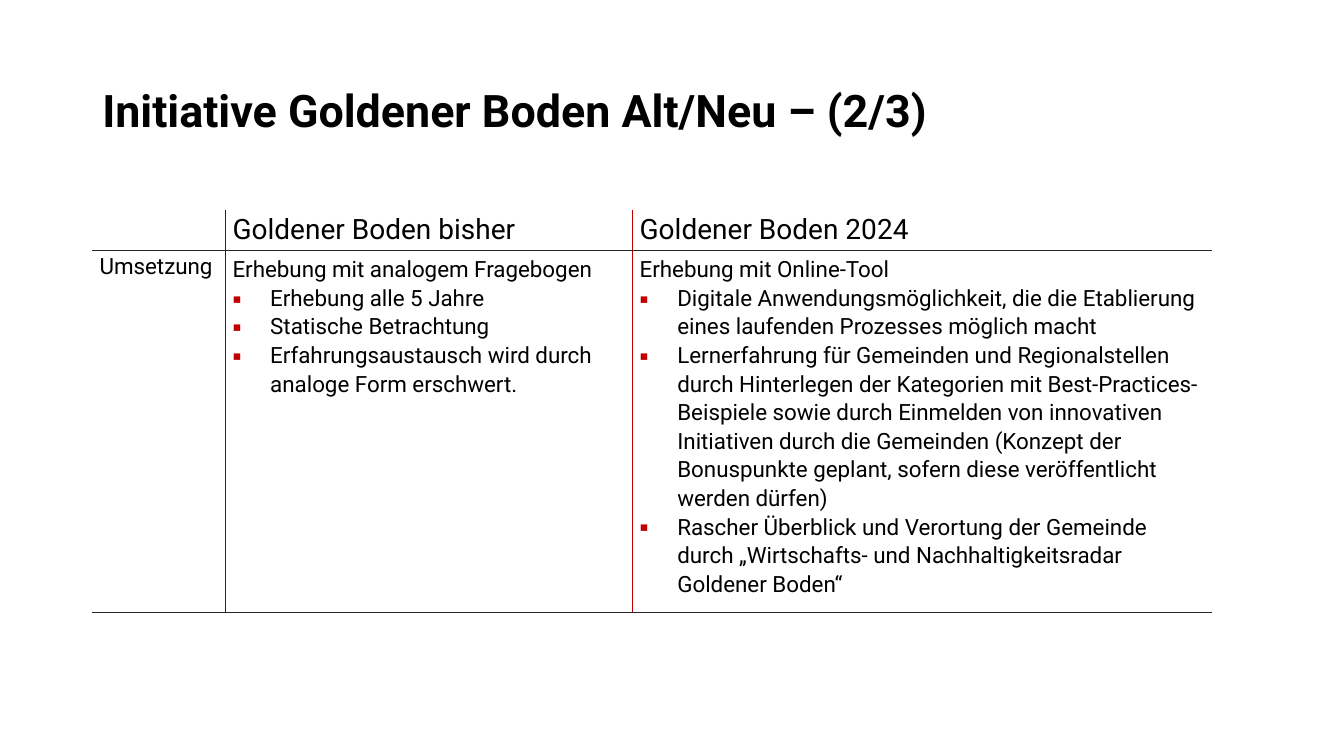
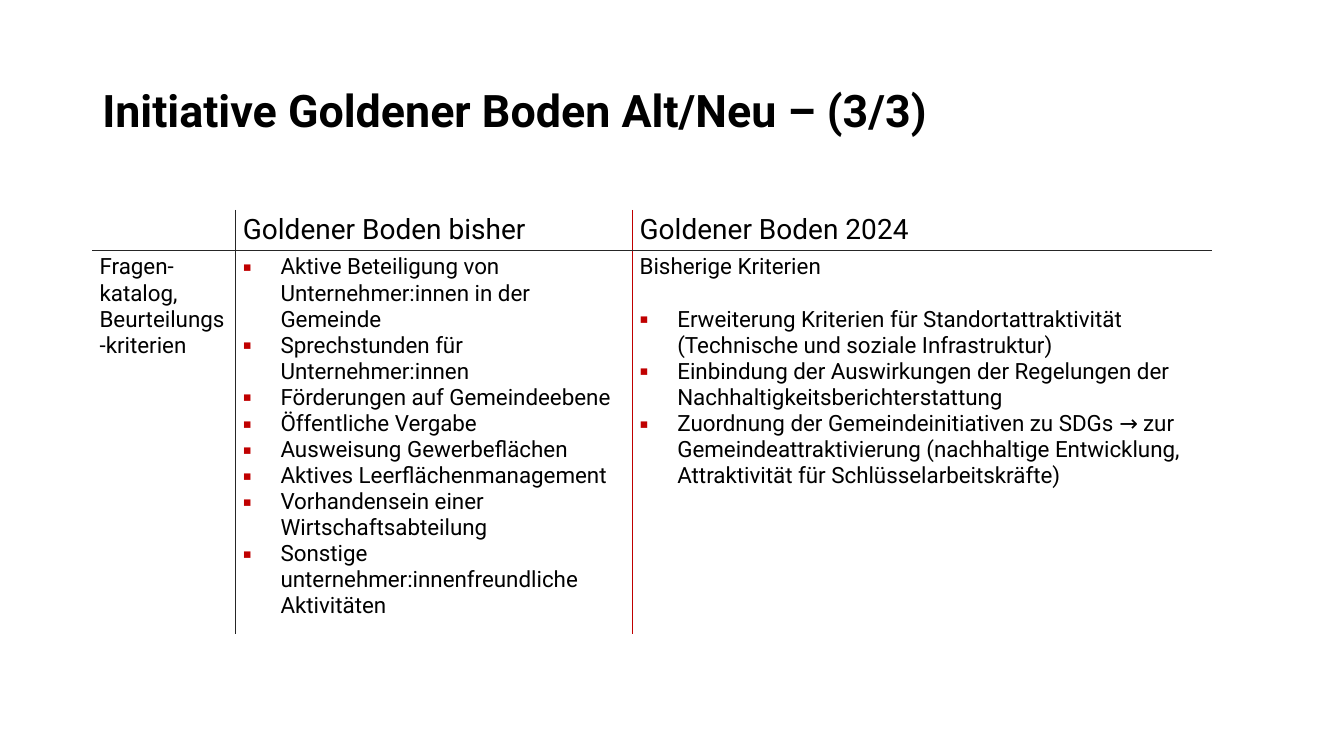
"""Build two slides comparing the old and the new Goldener Boden initiative."""
import pptx
import pptx.dml.color
import pptx.enum.text
import pptx.oxml
import pptx.oxml.ns
import pptx.util
from lxml import etree

Cm = pptx.util.Cm
Pt = pptx.util.Pt
qn = pptx.oxml.ns.qn

FONT = "Roboto"
COLORS = {"text": "000000", "line": "262626", "accent": "C00000"}
HEADINGS = ["", "Goldener Boden bisher", "Goldener Boden 2024"]
COLUMN_EDGES = [None, "line", "accent", None]
HEADER_HEIGHT = 1

SLIDES = [
    {
        "title": "Initiative Goldener Boden Alt/Neu – (2/3)",
        "widths": [3.35, 10.26, 14.6],
        "body_height": 8.82,
        "bottom": "line",
        "spacing": 1.1,
        "intro_gap": 0,
        "topic": ["Umsetzung"],
        "columns": [
            ("Erhebung mit analogem Fragebogen", [
                "Erhebung alle 5 Jahre",
                "Statische Betrachtung",
                "Erfahrungsaustausch wird durch analoge Form erschwert.",
            ]),
            ("Erhebung mit Online-Tool", [
                "Digitale Anwendungsmöglichkeit, die die Etablierung eines "
                "laufenden Prozesses möglich macht",
                "Lernerfahrung für Gemeinden und Regionalstellen durch "
                "Hinterlegen der Kategorien mit Best-Practices-Beispiele sowie "
                "durch Einmelden von innovativen Initiativen durch die "
                "Gemeinden (Konzept der Bonuspunkte geplant, sofern diese "
                "veröffentlicht werden dürfen)",
                "Rascher Überblick und Verortung der Gemeinde durch "
                "„Wirtschafts- und Nachhaltigkeitsradar Goldener Boden“",
            ]),
        ],
    },
    {
        "title": "Initiative Goldener Boden Alt/Neu – (3/3)",
        "widths": [3.61, 10, 14.6],
        "body_height": 9.35,
        "bottom": None,
        "spacing": 1.0,
        "intro_gap": 18.6,
        "topic": ["Fragen-katalog,", "Beurteilungs-kriterien"],
        "columns": [
            (None, [
                "Aktive Beteiligung von Unternehmer:innen in der Gemeinde",
                "Sprechstunden für Unternehmer:innen",
                "Förderungen auf Gemeindeebene",
                "Öffentliche Vergabe",
                "Ausweisung Gewerbeflächen",
                "Aktives Leerflächenmanagement",
                "Vorhandensein einer Wirtschaftsabteilung",
                "Sonstige unternehmer:innenfreundliche Aktivitäten",
            ]),
            ("Bisherige Kriterien", [
                "Erweiterung Kriterien für Standortattraktivität (Technische "
                "und soziale Infrastruktur)",
                "Einbindung der Auswirkungen der Regelungen der "
                "Nachhaltigkeitsberichterstattung",
                "Zuordnung der Gemeindeinitiativen zu SDGs → zur "
                "Gemeindeattraktivierung (nachhaltige Entwicklung, "
                "Attraktivität für Schlüsselarbeitskräfte)",
            ]),
        ],
    },
]


def add_run(p, text, size, bold=False):
    r = p.add_run()
    r.text = text
    r.font.name = FONT
    r.font.size = Pt(size)
    r.font.bold = bold
    r.font.color.rgb = pptx.dml.color.RGBColor.from_string(COLORS["text"])


def next_paragraph(tf):
    p = tf.paragraphs[0]
    return tf.add_paragraph() if p.runs else p


def set_bullet(p):
    pPr = p._p.get_or_add_pPr()
    pPr.set("marL", str(Cm(0.95)))
    pPr.set("indent", str(-Cm(0.95)))
    color = etree.SubElement(pPr, qn("a:buClr"))
    etree.SubElement(color, qn("a:srgbClr"), val=COLORS["accent"])
    etree.SubElement(pPr, qn("a:buFont"), typeface=FONT)
    etree.SubElement(pPr, qn("a:buChar"), char="▪")


def add_title(slide, text):
    sp = slide.shapes.add_textbox(Cm(2.33), Cm(1.01), Cm(27), Cm(3.68))
    tf = sp.text_frame
    tf.word_wrap = True
    tf.vertical_anchor = pptx.enum.text.MSO_ANCHOR.MIDDLE
    p = tf.paragraphs[0]
    p.line_spacing = 0.9
    add_run(p, text, 32, bold=True)


def set_borders(cell, edges):
    tcPr = cell._tc.get_or_add_tcPr()
    for i, (side, color) in enumerate(zip("LRTB", edges)):
        ln = etree.Element(qn(f"a:ln{side}"), w=str(Pt(1)))
        if color:
            fill = etree.SubElement(ln, qn("a:solidFill"))
            etree.SubElement(fill, qn("a:srgbClr"), val=COLORS[color])
        else:
            etree.SubElement(ln, qn("a:noFill"))
        tcPr.insert(i, ln)


def fill_body(cell, intro, bullets, spacing, intro_gap):
    tf = cell.text_frame
    if intro:
        p = next_paragraph(tf)
        p.line_spacing = spacing
        p.space_after = Pt(intro_gap)
        add_run(p, intro, 16)
    for text in bullets:
        p = next_paragraph(tf)
        p.line_spacing = spacing
        set_bullet(p)
        add_run(p, text, 16)


def add_comparison(slide, content):
    widths = content["widths"]
    heights = [HEADER_HEIGHT, content["body_height"]]
    frame = slide.shapes.add_table(2, 3, Cm(2.33), Cm(5.29),
                                   Cm(sum(widths)), Cm(sum(heights)))
    table = frame.table
    table.first_row = table.horz_banding = False
    for column, width in zip(table.columns, widths):
        column.width = Cm(width)
    row_edges = [None, "line", content["bottom"]]
    for i, height in enumerate(heights):
        table.rows[i].height = Cm(height)
        for j in range(len(widths)):
            cell = table.cell(i, j)
            cell.margin_left = cell.margin_right = Cm(0.18)
            cell.margin_top = cell.margin_bottom = Cm(0.09)
            cell.fill.background()
            set_borders(cell, COLUMN_EDGES[j:j + 2] + row_edges[i:i + 2])
    for j, heading in enumerate(HEADINGS):
        if heading:
            add_run(table.cell(0, j).text_frame.paragraphs[0], heading, 20)
    for line in content["topic"]:
        add_run(next_paragraph(table.cell(1, 0).text_frame), line, 16)
    for j, (intro, bullets) in enumerate(content["columns"], 1):
        fill_body(table.cell(1, j), intro, bullets,
                  content["spacing"], content["intro_gap"])


def main():
    prs = pptx.Presentation()
    prs.slide_width, prs.slide_height = Cm(33.87), Cm(19.05)
    for content in SLIDES:
        slide = prs.slides.add_slide(prs.slide_layouts[6])
        add_title(slide, content["title"])
        add_comparison(slide, content)
    prs.save("out.pptx")


if __name__ == "__main__":
    main()
